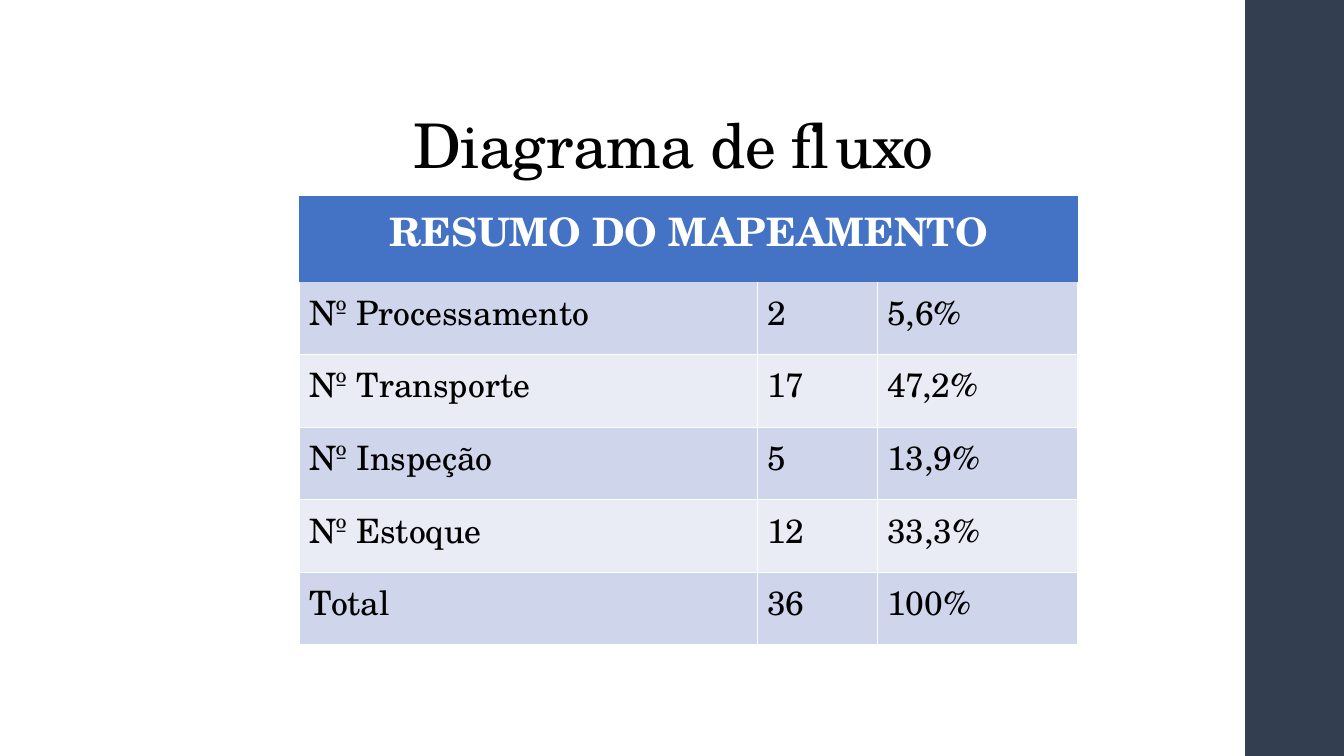
from dataclasses import dataclass

from lxml import etree
from pptx import Presentation
from pptx.dml.color import RGBColor
from pptx.enum.shapes import MSO_SHAPE
from pptx.enum.text import MSO_ANCHOR, MSO_AUTO_SIZE, PP_ALIGN
from pptx.oxml.ns import qn
from pptx.util import Emu, Pt

PX = 9144
RECT = MSO_SHAPE.RECTANGLE
BOTTOM = MSO_ANCHOR.BOTTOM
NO_FIT = MSO_AUTO_SIZE.NONE
CENTER, LEFT = PP_ALIGN.CENTER, PP_ALIGN.LEFT

TITLE = "Diagrama de fluxo"
HEADING = "RESUMO DO MAPEAMENTO"
ROWS = [
    ("Nº Processamento", "2", "5,6%"),
    ("Nº Transporte", "17", "47,2%"),
    ("Nº Inspeção", "5", "13,9%"),
    ("Nº Estoque", "12", "33,3%"),
    ("Total", "36", "100%"),
]
COL_WIDTHS = (454, 119, 199)
HEADING_HEIGHT, ROW_HEIGHT = 86, 72


@dataclass(frozen=True)
class Theme:
    """Colours and type of the slide."""
    font: str = "TeX Gyre Schola"
    ink: str = "000000"
    white: str = "FFFFFF"
    bar: str = "333F50"
    heading: str = "4472C4"
    bands: tuple = ("CFD5EA", "E9EBF5")
    title_size: int = 44
    heading_size: int = 28
    body_size: int = 24


THEME = Theme()


def px(n):
    """Turn pixels into EMU."""
    return Emu(n * PX)


def paint(fill, color):
    """Give a fill one solid colour."""
    fill.solid()
    fill.fore_color.rgb = RGBColor.from_string(color)


def write(tf, text, size, color, align, bold=False):
    """Write one run into the first paragraph and return both."""
    p = tf.paragraphs[0]
    p.alignment = align
    r = p.add_run()
    r.text = text
    r.font.name = THEME.font
    r.font.size = Pt(size)
    r.font.bold = bold
    r.font.color.rgb = RGBColor.from_string(color)
    return p, r


def add_bar(s, x, y, w, h):
    """Draw the side bar."""
    sp = s.shapes.add_shape(RECT, px(x), px(y), px(w), px(h))
    sp.shadow.inherit = False
    paint(sp.fill, THEME.bar)
    sp.line.fill.background()


def set_title(s, x, y, w, h):
    """Place and fill the title placeholder."""
    sp = s.shapes.title
    sp.left, sp.top, sp.width, sp.height = px(x), px(y), px(w), px(h)
    tf = sp.text_frame
    tf.word_wrap = True
    tf.auto_size = NO_FIT
    tf.vertical_anchor = BOTTOM
    p, r = write(tf, TITLE, THEME.title_size, THEME.ink, CENTER)
    p.line_spacing = 0.9
    r.font._element.set("spc", "-50")


def set_borders(cell, sides):
    """Rule the named sides in white and clear the others."""
    tc_pr = cell._tc.get_or_add_tcPr()
    for side in "LRTB":
        ln = etree.SubElement(tc_pr, qn(f"a:ln{side}"), w=str(Pt(1)))
        if side in sides:
            fill = etree.SubElement(ln, qn("a:solidFill"))
            etree.SubElement(fill, qn("a:srgbClr"), val=THEME.white)
        else:
            etree.SubElement(ln, qn("a:noFill"))


def add_summary(s, x, y):
    """Build the summary table with its merged heading."""
    height = HEADING_HEIGHT + ROW_HEIGHT * len(ROWS)
    frame = s.shapes.add_table(len(ROWS) + 1, len(COL_WIDTHS), px(x), px(y),
                               px(sum(COL_WIDTHS)), px(height))
    table = frame.table
    table.first_row = False
    table.horz_banding = False
    for col, width in zip(table.columns, COL_WIDTHS):
        col.width = px(width)
    for row in table.rows:
        row.height = px(ROW_HEIGHT)
    table.rows[0].height = px(HEADING_HEIGHT)

    heading = table.cell(0, 0)
    heading.merge(table.cell(0, len(COL_WIDTHS) - 1))
    for cell in table.rows[0].cells:
        set_borders(cell, "")
        paint(cell.fill, THEME.heading)
    write(heading.text_frame, HEADING, THEME.heading_size, THEME.white, CENTER, True)

    for i, values in enumerate(ROWS):
        for j, value in enumerate(values):
            cell = table.cell(i + 1, j)
            set_borders(cell, "LRTB" if i else "LRB")
            paint(cell.fill, THEME.bands[i % 2])
            write(cell.text_frame, value, THEME.body_size, THEME.ink, LEFT)


def main():
    """Build and save the slide."""
    prs = Presentation()
    prs.slide_width, prs.slide_height = px(1333), px(750)
    s = prs.slides.add_slide(prs.slide_layouts.get_by_name("Title Only"))
    paint(s.background.fill, THEME.white)
    add_bar(s, 1235, 0, 100, 750)
    set_title(s, 138, 40, 1060, 145)
    add_summary(s, 297, 194)
    prs.save("out.pptx")


if __name__ == "__main__":
    main()
